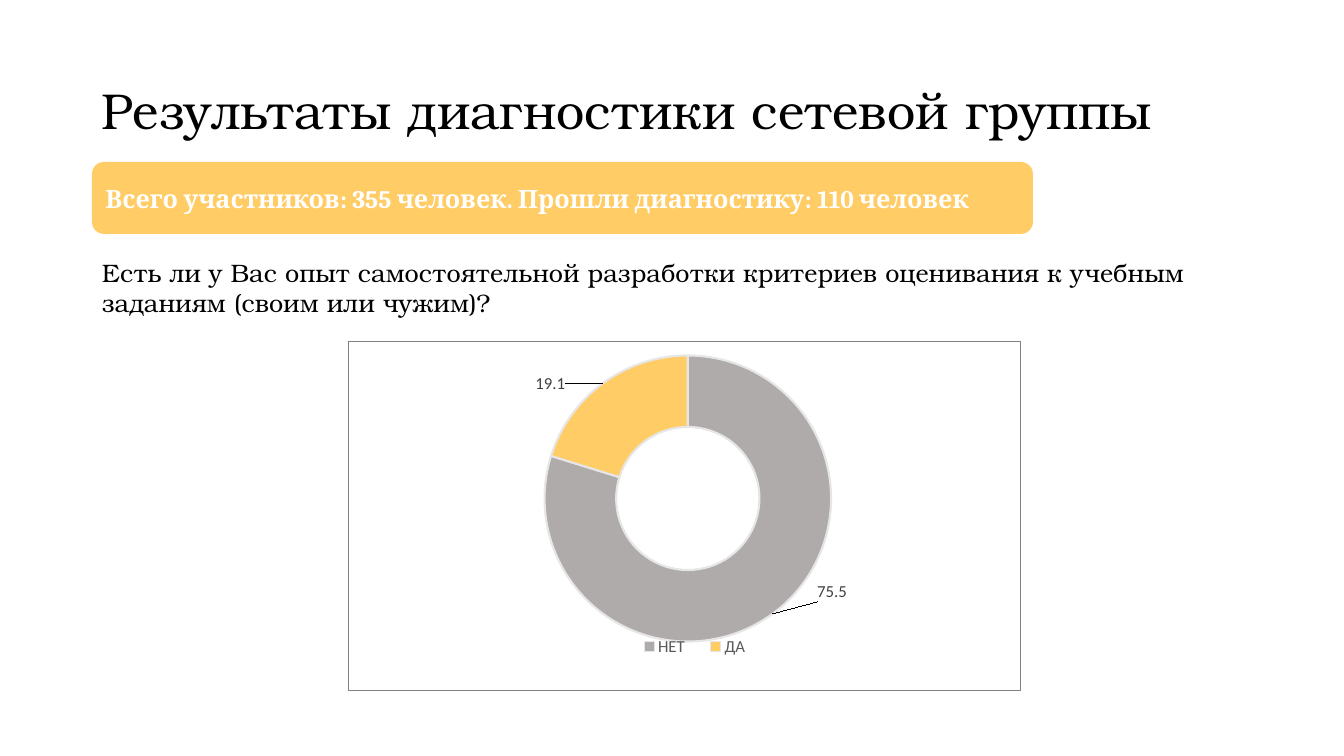
from lxml import etree
from pptx import Presentation
from pptx.chart.data import CategoryChartData
from pptx.dml.color import RGBColor
from pptx.enum.chart import XL_CHART_TYPE, XL_LEGEND_POSITION
from pptx.enum.shapes import MSO_SHAPE
from pptx.enum.text import MSO_ANCHOR, PP_ALIGN
from pptx.oxml import parse_xml
from pptx.oxml.ns import nsdecls, qn
from pptx.util import Pt

DOUGHNUT = XL_CHART_TYPE.DOUGHNUT
BOTTOM = XL_LEGEND_POSITION.BOTTOM
ROUNDED = MSO_SHAPE.ROUNDED_RECTANGLE
TOP, MIDDLE = MSO_ANCHOR.TOP, MSO_ANCHOR.MIDDLE
LEFT = PP_ALIGN.LEFT

PX = 914400 / 100.8
SERIF, BANNER_FONT, CHART_FONT = "TeX Gyre Bonum", "Cambria", "Calibri"
YELLOW, GREY, BLACK, WHITE = "FFCC66", "AFABAB", "000000", "FFFFFF"

# Answer, share, colour, label offset as a fraction of the chart
ANSWERS = [
    ("НЕТ", 75.5, GREY, (0.12, 0.02)),
    ("ДА", 19.1, YELLOW, (-0.11, -0.08)),
]


def px(*lengths):
    return [round(length * PX) for length in lengths]


def rgb(color):
    return RGBColor.from_string(color)


def set_font(font, name, size, color, bold=False):
    font.name, font.size, font.bold = name, Pt(size), bold
    font.color.rgb = rgb(color)


def write(sp, text, font, size, color, anchor, bold=False, spacing=1.0):
    tf = sp.text_frame
    tf.word_wrap = True
    tf.vertical_anchor = anchor
    p = tf.paragraphs[0]
    p.text = text
    p.alignment = LEFT
    p.line_spacing = spacing
    set_font(p.font, font, size, color, bold)


def add_text(slide, box, text, size, anchor, spacing=1.0):
    sp = slide.shapes.add_textbox(*px(*box))
    write(sp, text, SERIF, size, BLACK, anchor, spacing=spacing)


def add_banner(slide, box, text):
    sp = slide.shapes.add_shape(ROUNDED, *px(*box))
    sp.shadow.inherit = False
    sp.fill.solid()
    sp.fill.fore_color.rgb = rgb(YELLOW)
    sp.line.fill.background()
    write(sp, text, BANNER_FONT, 18, WHITE, MIDDLE, bold=True)


def manual_layout(**values):
    items = "".join(f'<c:{key} val="{value}"/>' for key, value in values.items())
    return parse_xml(f'<c:layout {nsdecls("c")}><c:manualLayout>{items}'
                     "</c:manualLayout></c:layout>")


def replace_layout(parent, layout, index):
    for old in parent.findall(qn("c:layout")):
        parent.remove(old)
    parent.insert(index, layout)


def add_label(labels, idx, offset):
    label = parse_xml(f'<c:dLbl {nsdecls("c")}><c:idx val="{idx}"/></c:dLbl>')
    label.append(manual_layout(x=offset[0], y=offset[1]))
    for part in ("LegendKey", "Val", "CatName", "SerName", "Percent", "BubbleSize"):
        etree.SubElement(label, qn(f"c:show{part}"), val=str(int(part == "Val")))
    labels.insert(idx, label)


def add_doughnut(slide, box):
    data = CategoryChartData()
    data.categories = [answer[0] for answer in ANSWERS]
    data.add_series("Series 1", [answer[1] for answer in ANSWERS])
    chart = slide.shapes.add_chart(DOUGHNUT, *px(*box), data).chart
    set_font(chart.font, CHART_FONT, 10, BLACK)
    chart.has_title = False

    # Legend
    chart.has_legend = True
    legend = chart.legend
    legend.position = BOTTOM
    legend.include_in_layout = False
    set_font(legend.font, CHART_FONT, 12, "595959")
    replace_layout(legend._element, manual_layout(
        xMode="edge", yMode="edge", x=0.41, y=0.84, w=0.21, h=0.07), 1)

    # Ring and its labels
    plot = chart.plots[0]
    plot.vary_by_categories = True
    plot._element.find(qn("c:holeSize")).set("val", "75")
    series = plot.series[0]
    labels = series.data_labels
    labels.show_value = True
    set_font(labels.font, CHART_FONT, 12, "404040")
    labels._element.find(qn("c:showLeaderLines")).set("val", "1")
    for idx, (_, _, color, offset) in enumerate(ANSWERS):
        fmt = series.points[idx].format
        fmt.fill.solid()
        fmt.fill.fore_color.rgb = rgb(color)
        fmt.line.color.rgb = rgb("E7E6E6")
        fmt.line.width = Pt(1.5)
        add_label(labels._element, idx, offset)

    # Plot position and frame
    space = chart._chartSpace
    replace_layout(space.chart.plotArea, manual_layout(
        layoutTarget="inner", xMode="edge", yMode="edge",
        x=0.29, y=0.04, w=0.43, h=0.82), 0)
    frame = parse_xml(
        f'<c:spPr {nsdecls("c", "a")}><a:noFill/><a:ln w="9525"><a:solidFill>'
        '<a:srgbClr val="808080"/></a:solidFill></a:ln></c:spPr>')
    space.chart.addnext(frame)


def main():
    prs = Presentation()
    prs.slide_width, prs.slide_height = px(1344, 756)
    slide = prs.slides.add_slide(prs.slide_layouts[6])

    add_text(slide, (92, 40, 1159, 146), "Результаты диагностики сетевой группы",
             36, MIDDLE, spacing=0.9)
    add_banner(slide, (92, 162, 941, 72),
               "Всего участников: 355 человек. Прошли диагностику: 110 человек")
    add_text(slide, (92, 252, 1185, 72),
             "Есть ли у Вас опыт самостоятельной разработки критериев оценивания "
             "к учебным заданиям (своим или чужим)?", 18, TOP)
    add_doughnut(slide, (348, 341, 673, 350))

    prs.save("out.pptx")


if __name__ == "__main__":
    main()
